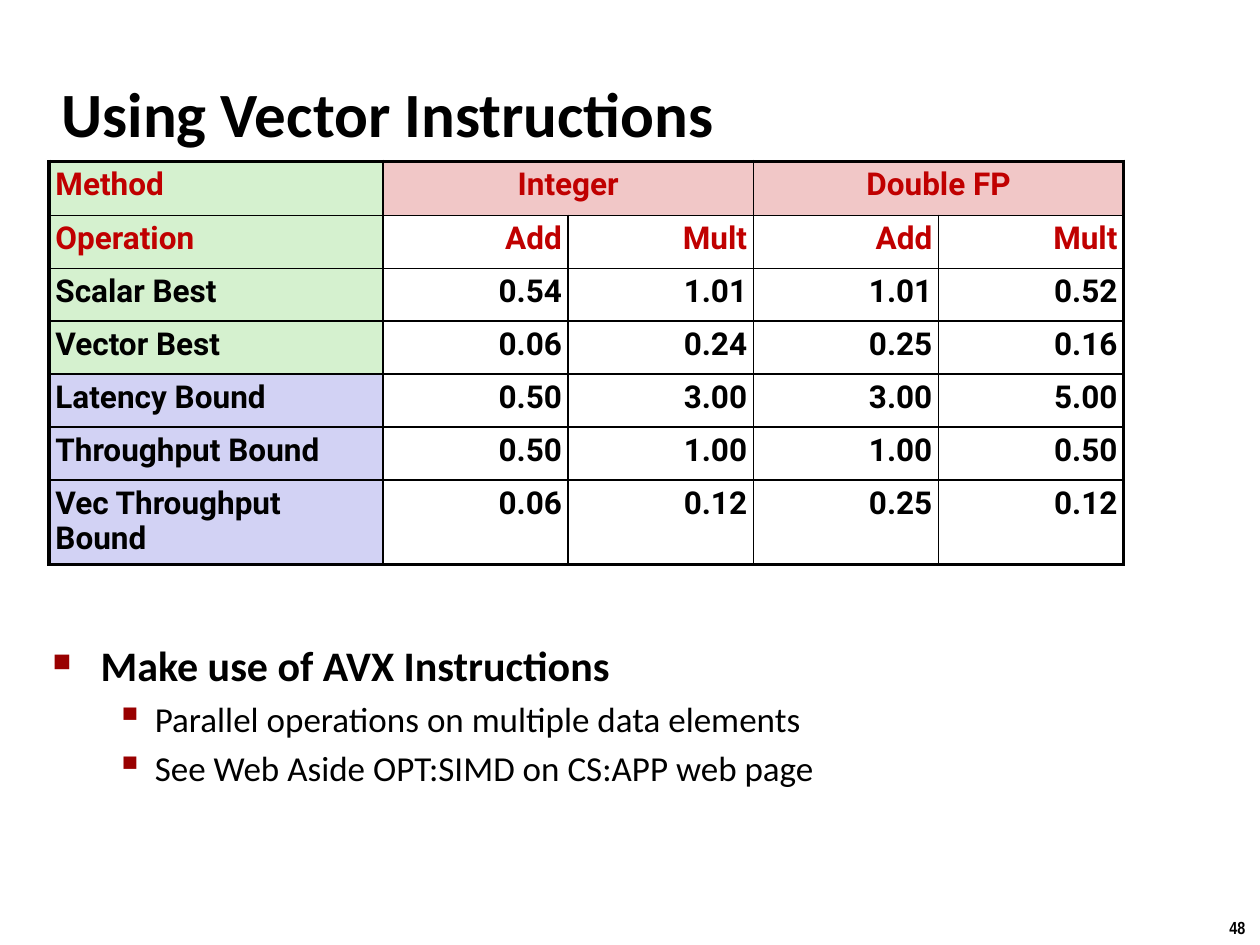
from dataclasses import dataclass
from lxml.etree import SubElement
from pptx import Presentation
from pptx.dml.color import RGBColor as RGB
from pptx.enum.text import MSO_ANCHOR as Anchor, PP_ALIGN as Align
from pptx.oxml.ns import qn
from pptx.util import Inches, Pt


@dataclass(frozen=True)
class Theme:
    ink: str = "000000"
    heading: str = "C00000"
    bullet: str = "990000"
    green: str = "D5F1CF"
    pink: str = "F1C7C7"
    violet: str = "D2D2F4"
    font: str = "Calibri"
    table_font: str = "Roboto"
    number_font: str = "Arial Narrow"
    title_size: float = 36
    body_sizes: tuple = (24, 20)
    table_size: float = 18
    number_size: float = 10
    thin: float = 1
    thick: float = 2.25


THEME = Theme()
HEADERS = ["Integer", "Double FP"]
ROWS = [
    ["Operation", "Add", "Mult", "Add", "Mult"],
    ["Scalar Best", "0.54", "1.01", "1.01", "0.52"],
    ["Vector Best", "0.06", "0.24", "0.25", "0.16"],
    ["Latency Bound", "0.50", "3.00", "3.00", "5.00"],
    ["Throughput Bound", "0.50", "1.00", "1.00", "0.50"],
    ["Vec Throughput Bound", "0.06", "0.12", "0.25", "0.12"],
]
BULLETS = [
    (0, "Make use of AVX Instructions"),
    (1, "Parallel operations on multiple data elements"),
    (1, "See Web Aside OPT:SIMD on CS:APP web page"),
]
BULLET_STYLES = [("■", 60, 0.38, -0.38), ("▪", 110, 0.81, -0.31)]


def set_attrs(obj, values):
    for name, value in values.items():
        setattr(obj, name, value)


def write(p, text, size, font=THEME.font, color=THEME.ink, bold=True):
    r = p.add_run()
    r.text = text
    set_attrs(r.font, {"size": Pt(size), "name": font, "bold": bold})
    r.font.color.rgb = RGB.from_string(color)


def indent(p, margin, first):
    pPr = p._p.get_or_add_pPr()
    pPr.set("marL", str(Inches(margin)))
    pPr.set("indent", str(Inches(first)))
    return pPr


def space_before(p, percent):
    pPr = p._p.get_or_add_pPr()
    space = SubElement(pPr, qn("a:spcBef"))
    SubElement(space, qn("a:spcPct"), val=str(percent * 1000))
    return pPr


def add_text(s, box, wrap=True, anchor=Anchor.TOP):
    tf = s.shapes.add_textbox(*map(Inches, box)).text_frame
    set_attrs(tf, {"word_wrap": wrap, "vertical_anchor": anchor})
    return tf


def add_bullets(tf, items):
    for i, (level, text) in enumerate(items):
        p = tf.add_paragraph() if i else tf.paragraphs[0]
        p.level = level
        char, size, margin, first = BULLET_STYLES[level]
        indent(p, margin, first)
        pPr = space_before(p, 20)
        color = SubElement(pPr, qn("a:buClr"))
        SubElement(color, qn("a:srgbClr"), val=THEME.bullet)
        SubElement(pPr, qn("a:buSzPct"), val=str(size * 1000))
        SubElement(pPr, qn("a:buChar"), char=char)
        write(p, text, THEME.body_sizes[level], bold=level == 0)


def set_borders(cell, edges):
    tcPr = cell._tc.get_or_add_tcPr()
    for side, outer in edges.items():
        width = THEME.thick if outer else THEME.thin
        ln = SubElement(tcPr, qn(f"a:ln{side}"), w=str(Pt(width)))
        fill = SubElement(ln, qn("a:solidFill"))
        SubElement(fill, qn("a:srgbClr"), val=THEME.ink)


def cell_fill(row, col):
    if col == 0:
        return THEME.green if row < 4 else THEME.violet
    return THEME.pink if row == 0 else None


def fill_cell(cell, text, row, col):
    inset = Inches(0.05)
    set_attrs(cell, dict.fromkeys(
        ("margin_left", "margin_right", "margin_top", "margin_bottom"), inset))
    color = cell_fill(row, col)
    if color:
        cell.fill.solid()
        cell.fill.fore_color.rgb = RGB.from_string(color)
    else:
        cell.fill.background()
    if not text:
        return
    p = cell.text_frame.paragraphs[0]
    inner = Align.CENTER if row == 0 else Align.RIGHT
    set_attrs(p, {"alignment": inner if col else Align.LEFT, "line_spacing": 0.95})
    space_before(p, 50)
    ink = THEME.heading if row < 2 else THEME.ink
    write(p, text, THEME.table_size, THEME.table_font, ink)


def add_results(s):
    top = ["Method"]
    for name in HEADERS:
        top += [name, ""]
    rows = [top] + ROWS
    last_row, last_col = len(rows) - 1, len(top) - 1
    box = map(Inches, (0.39, 1.28, 8.53, 2.95))
    table = s.shapes.add_table(len(rows), len(top), *box).table
    set_attrs(table, {"first_row": False, "horz_banding": False})
    for i, col in enumerate(table.columns):
        col.width = Inches(1.47 if i else 2.65)
    for i, row in enumerate(table.rows):
        row.height = Inches(0.42 if i else 0.43)
    for i, texts in enumerate(rows):
        for j, text in enumerate(texts):
            cell = table.cell(i, j)
            right = last_col - 1 if i == 0 else last_col
            set_borders(cell, {"L": j == 0, "R": j >= right,
                               "T": i == 0, "B": i == last_row})
            fill_cell(cell, text, i, j)
    for j in range(1, last_col, 2):
        table.cell(0, j).merge(table.cell(0, j + 1))


def main():
    prs = Presentation()
    set_attrs(prs, {"slide_width": Inches(10), "slide_height": Inches(7.5)})
    s = prs.slides.add_slide(prs.slide_layouts[6])

    number = add_text(s, (9.66, 7.23, 0.34, 0.27), wrap=False)
    write(number.paragraphs[0], "48", THEME.number_size, THEME.number_font)

    title = add_text(s, (0.39, 0.48, 8.3, 0.83), anchor=Anchor.MIDDLE)
    indent(title.paragraphs[0], 0.13, -0.13)
    write(title.paragraphs[0], "Using Vector Instructions", THEME.title_size)

    add_bullets(add_text(s, (0.32, 5.03, 9.09, 2.05)), BULLETS)
    add_results(s)
    prs.save("out.pptx")


if __name__ == "__main__":
    main()
